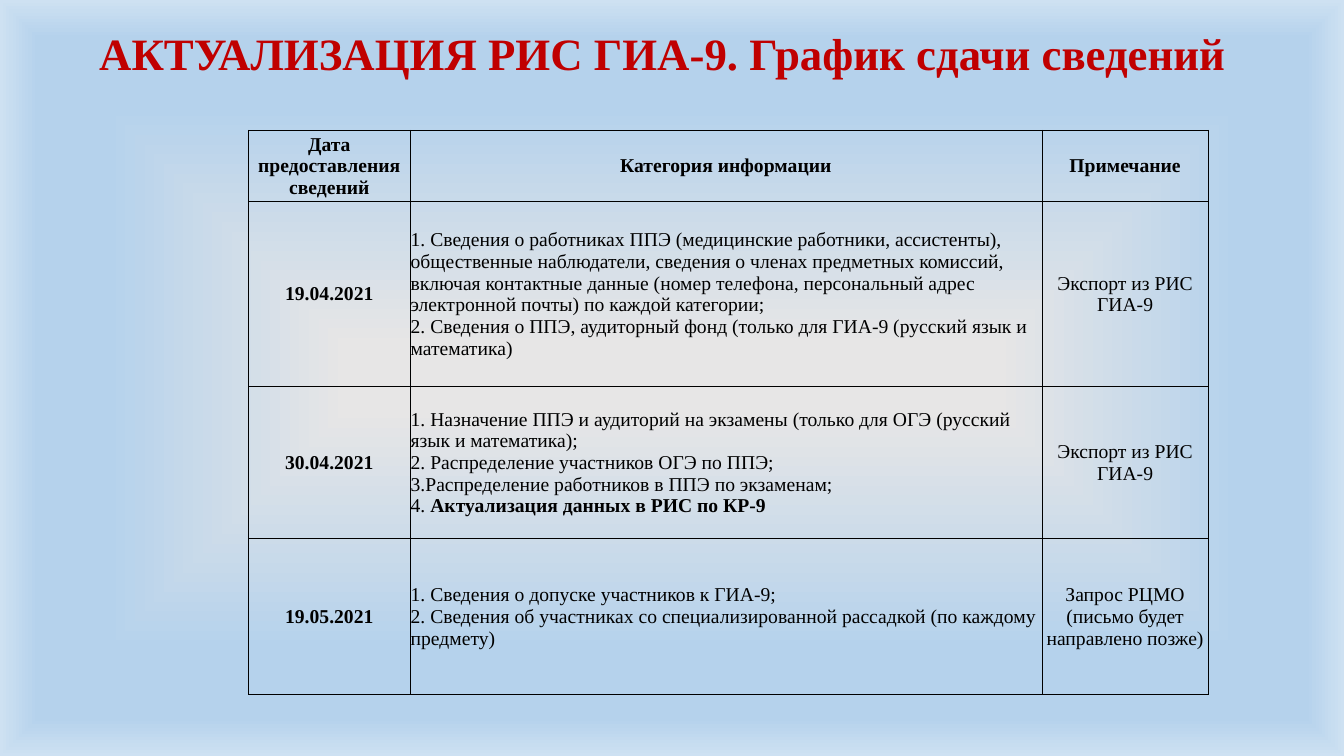
"""Build the slide with the schedule for submitting GIA-9 data."""
from pptx import Presentation
from pptx.dml.color import RGBColor
from pptx.enum.text import MSO_ANCHOR as Anchor, PP_ALIGN as Align
from pptx.oxml import parse_xml
from pptx.oxml.ns import nsdecls, qn
from pptx.util import Cm, Pt

RED = RGBColor(0xC0, 0x00, 0x00)
BLACK = RGBColor(0x00, 0x00, 0x00)
GLOW_STOPS = [
    (8, RGBColor(0xE7, 0xE6, 0xE6)),
    (72, RGBColor(0xB5, 0xD2, 0xEC)),
    (90, RGBColor(0xB5, 0xD2, 0xEC)),
    (100, RGBColor(0xCE, 0xE1, 0xF2)),
]
COLUMN_WIDTHS = [4.06, 15.93, 4.19]
ROW_HEIGHTS = [1.8, 4.65, 3.84, 3.92]
SCHEDULE = [
    ("Дата предоставления сведений", "Категория информации", "Примечание"),
    (
        "19.04.2021",
        "1. Сведения о работниках ППЭ (медицинские работники, ассистенты), "
        "общественные наблюдатели, сведения о членах предметных комиссий, "
        "включая контактные данные (номер телефона, персональный адрес "
        "электронной почты) по каждой категории;\n"
        "2. Сведения о ППЭ, аудиторный фонд (только для ГИА-9 (русский язык и математика)",
        "Экспорт из РИС ГИА-9",
    ),
    (
        "30.04.2021",
        "1. Назначение ППЭ и аудиторий на экзамены (только для ОГЭ (русский язык и математика);\n"
        "2. Распределение участников ОГЭ по ППЭ;\n"
        "3.Распределение работников в ППЭ по экзаменам;\n"
        "4. ",
        "Экспорт из РИС ГИА-9",
    ),
    (
        "19.05.2021",
        "1. Сведения о допуске участников к ГИА-9;\n"
        "2. Сведения об участниках со специализированной рассадкой (по каждому предмету)",
        "Запрос РЦМО (письмо будет направлено позже)",
    ),
]


def style(span, size, color, bold):
    span.font.name = "Times New Roman"
    span.font.size = Pt(size)
    span.font.color.rgb = color
    span.font.bold = bold


deck = Presentation()
deck.slide_width, deck.slide_height = Cm(33.87), Cm(19.05)
page = deck.slides.add_slide(deck.slide_layouts[6])

page.background.fill.gradient()
old_gradient = page.element.find(".//" + qn("a:gradFill"))
stops = "".join(
    f'<a:gs pos="{position * 1000}"><a:srgbClr val="{color}"/></a:gs>'
    for position, color in GLOW_STOPS
)
glow = parse_xml(
    f'<a:gradFill {nsdecls("a")} rotWithShape="1"><a:gsLst>{stops}</a:gsLst>'
    '<a:path path="shape"><a:fillToRect l="50000" t="50000" r="50000" b="50000"/></a:path>'
    "</a:gradFill>"
)
old_gradient.getparent().replace(old_gradient, glow)

title = page.shapes.add_textbox(Cm(0), Cm(-0.43), Cm(33.4), Cm(2.57)).text_frame
title.word_wrap = True
title.vertical_anchor = Anchor.BOTTOM
title.text = "АКТУАЛИЗАЦИЯ РИС ГИА-9. График сдачи сведений"
title.paragraphs[0].alignment = Align.CENTER
style(title.paragraphs[0].runs[0], 32, RED, True)

table = page.shapes.add_table(
    len(SCHEDULE), len(COLUMN_WIDTHS), Cm(6.27), Cm(3.28),
    Cm(sum(COLUMN_WIDTHS)), Cm(sum(ROW_HEIGHTS)),
).table
table.first_row = table.horz_banding = False
for column, width in zip(table.columns, COLUMN_WIDTHS):
    column.width = Cm(width)
for row, height in zip(table.rows, ROW_HEIGHTS):
    row.height = Cm(height)

for row_index, entry in enumerate(SCHEDULE):
    for column_index, text in enumerate(entry):
        cell = table.cell(row_index, column_index)
        cell.vertical_anchor = Anchor.MIDDLE
        cell.margin_left = cell.margin_right = cell.margin_top = Cm(0.02)
        cell.margin_bottom = 0
        for side in ("lnL", "lnR", "lnT", "lnB"):
            cell._tc.get_or_add_tcPr().append(parse_xml(
                f'<a:{side} {nsdecls("a")} w="{Pt(0.5)}"><a:solidFill>'
                f'<a:srgbClr val="{BLACK}"/></a:solidFill></a:{side}>'
            ))
        cell.fill.background()

        is_header = row_index == 0
        is_details = column_index == 1 and not is_header
        para = cell.text_frame.paragraphs[0]
        para.text = text
        para.alignment = Align.LEFT if is_details else Align.CENTER
        for span in para.runs:
            style(span, 14, BLACK, is_header or column_index == 0)

update_note = table.cell(2, 1).text_frame.paragraphs[0].add_run()
update_note.text = "Актуализация данных в РИС по КР-9"
style(update_note, 14, BLACK, True)

deck.save("out.pptx")
